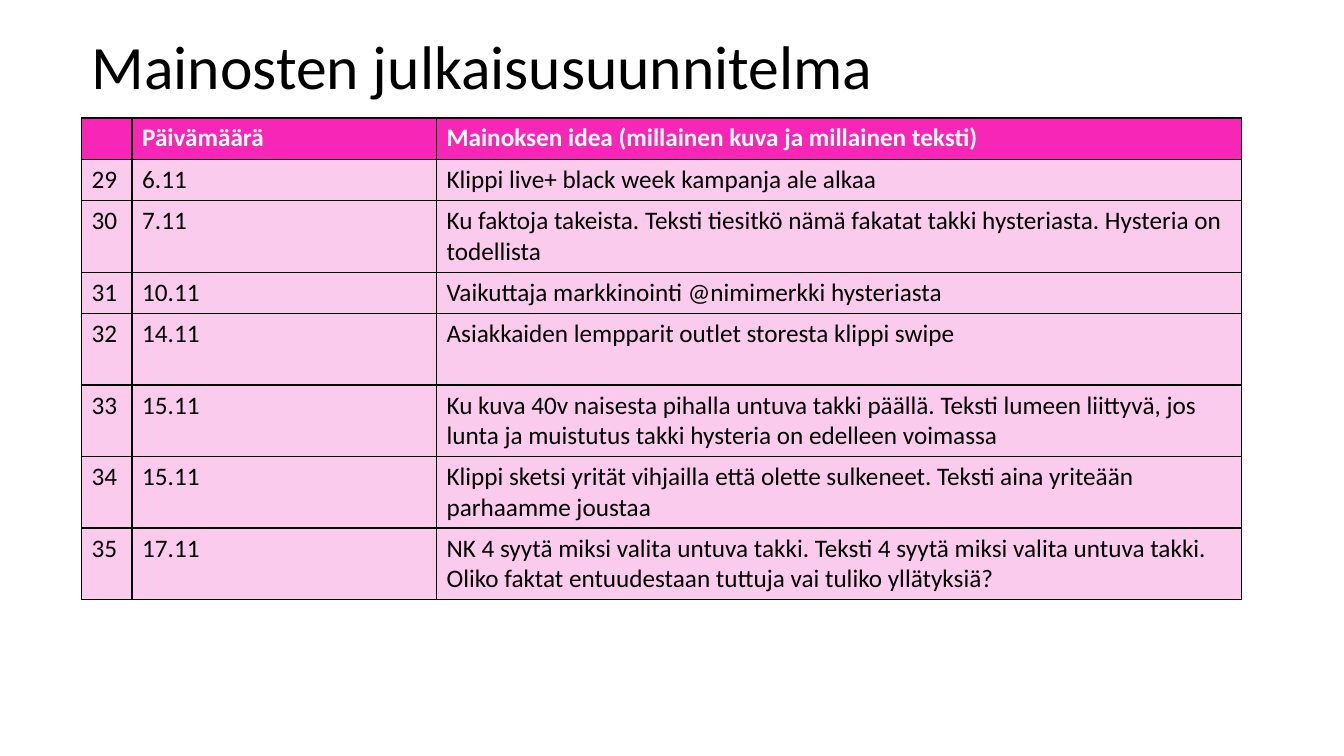
import dataclasses

import lxml.etree
import pptx
import pptx.dml.color
import pptx.enum.text
import pptx.oxml.ns
import pptx.util

Inches = pptx.util.Inches


@dataclasses.dataclass(frozen=True)
class Theme:
    font: str = "Calibri"
    title: int = 44
    body: int = 18
    line: int = 1
    dark: str = "000000"
    light: str = "FFFFFF"
    head: str = "F826B7"
    pale: str = "FBCBEE"


@dataclasses.dataclass(frozen=True)
class Row:
    num: str
    date: str
    idea: str
    tall: float = 0.41


THEME = Theme()
LEFT, WIDTH = 0.81, 11.5
COLS = (0.5, 3.02, 7.98)
DOUBLE = 0.71
HEAD = Row("", "Päivämäärä", "Mainoksen idea (millainen kuva ja millainen teksti)")
ADS = (
    Row("29", "6.11", "Klippi live+ black week kampanja ale alkaa"),
    Row("30", "7.11", "Ku faktoja takeista. Teksti tiesitkö nämä fakatat takki hysteriasta. "
        "Hysteria on todellista", DOUBLE),
    Row("31", "10.11", "Vaikuttaja markkinointi @nimimerkki hysteriasta"),
    Row("32", "14.11", "Asiakkaiden lempparit outlet storesta klippi swipe", DOUBLE),
    Row("33", "15.11", "Ku kuva 40v naisesta pihalla untuva takki päällä. Teksti lumeen liittyvä, "
        "jos lunta ja muistutus takki hysteria on edelleen voimassa", DOUBLE),
    Row("34", "15.11", "Klippi sketsi yrität vihjailla että olette sulkeneet. "
        "Teksti aina yriteään parhaamme joustaa", DOUBLE),
    Row("35", "17.11", "NK 4 syytä miksi valita untuva takki. Teksti 4 syytä miksi valita "
        "untuva takki. Oliko faktat entuudestaan tuttuja vai tuliko yllätyksiä?", DOUBLE),
)


def color(code: str) -> pptx.dml.color.RGBColor:
    return pptx.dml.color.RGBColor.from_string(code)


def write(frame, text: str, size: int, ink: str, bold: bool = False):
    para = frame.paragraphs[0]
    para.text = text
    font = para.font
    font.name, font.size, font.bold = THEME.font, pptx.util.Pt(size), bold
    font.color.rgb = color(ink)
    return para


def border(cell) -> None:
    """Rule all four sides; call before filling, as the XML order demands."""
    props = cell._tc.get_or_add_tcPr()
    qn = pptx.oxml.ns.qn
    for side in "LRTB":
        line = lxml.etree.SubElement(props, qn(f"a:ln{side}"), w=str(pptx.util.Pt(THEME.line)))
        fill = lxml.etree.SubElement(line, qn("a:solidFill"))
        lxml.etree.SubElement(fill, qn("a:srgbClr"), val=THEME.dark)


def add_title(slide, text: str) -> None:
    box = slide.shapes.add_textbox(Inches(LEFT), Inches(-0.04), Inches(WIDTH), Inches(1.45))
    frame = box.text_frame
    frame.word_wrap = True
    frame.vertical_anchor = pptx.enum.text.MSO_ANCHOR.MIDDLE
    write(frame, text, THEME.title, THEME.dark).line_spacing = 0.9


def add_plan(slide, rows: tuple[Row, ...]) -> None:
    tall = sum(row.tall for row in rows)
    table = slide.shapes.add_table(len(rows), len(COLS), Inches(LEFT), Inches(1.17),
                                   Inches(WIDTH), Inches(tall)).table
    for col, width in zip(table.columns, COLS):
        col.width = Inches(width)
    for index, row in enumerate(rows):
        table.rows[index].height = Inches(row.tall)
        top = index == 0
        for cell, text in zip(table.rows[index].cells, (row.num, row.date, row.idea)):
            border(cell)
            cell.fill.solid()
            cell.fill.fore_color.rgb = color(THEME.head if top else THEME.pale)
            write(cell.text_frame, text, THEME.body, THEME.light if top else THEME.dark, top)


def main() -> None:
    deck = pptx.Presentation()
    deck.slide_width, deck.slide_height = Inches(13.33), Inches(7.5)
    slide = deck.slides.add_slide(deck.slide_layouts[6])
    add_title(slide, "Mainosten julkaisusuunnitelma")
    add_plan(slide, (HEAD, *ADS))
    deck.save("out.pptx")


if __name__ == "__main__":
    main()
